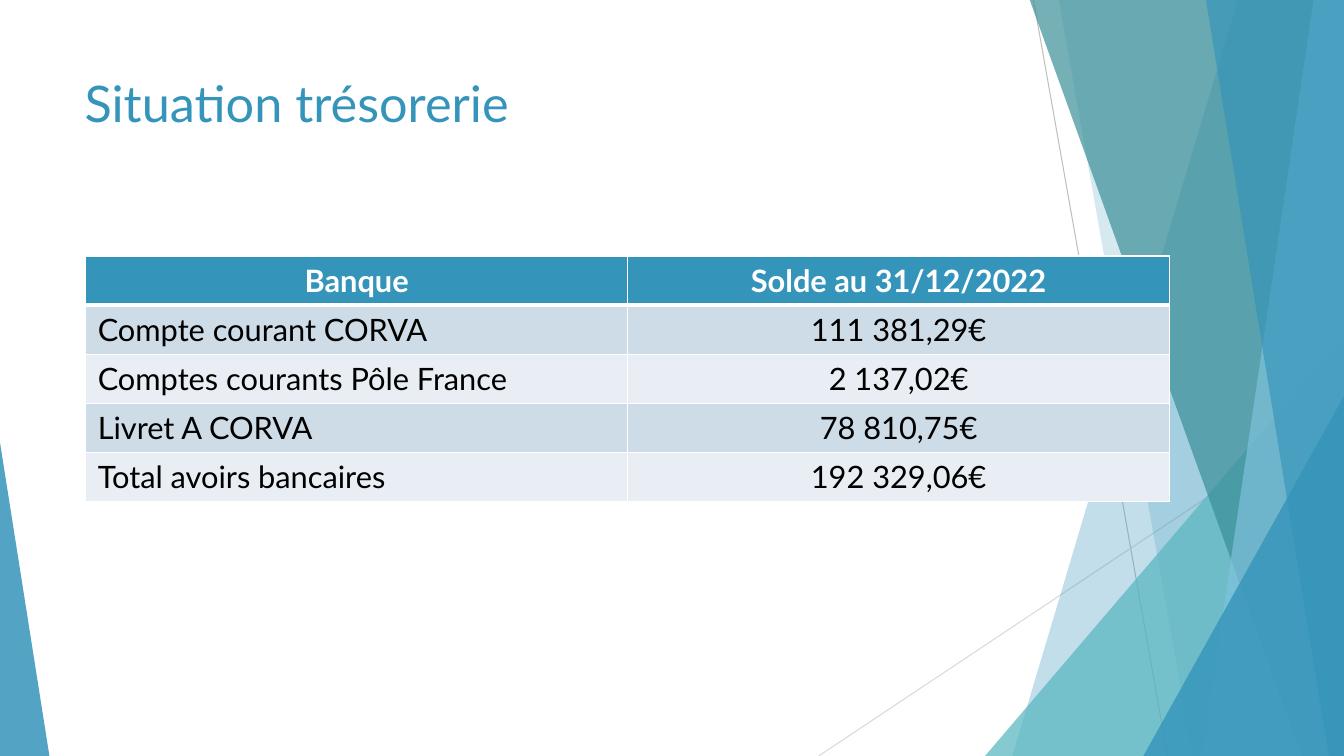
from dataclasses import dataclass

from lxml.etree import SubElement
from pptx import Presentation
from pptx.dml.color import RGBColor
from pptx.enum.shapes import MSO_CONNECTOR, MSO_SHAPE
from pptx.enum.text import MSO_ANCHOR, PP_ALIGN
from pptx.oxml.ns import qn
from pptx.util import Pt

PX = 9144  # EMU per px, 100 px to the inch
WIDE, HIGH = 1333, 750
FONT = "Lato"
COLORS = {
    "blue": "3494BA", "teal": "58B6C0", "deep": "3A8F98", "sky": "7FC1DB",
    "gray": "BFBFBF", "pale": "D9D9D9", "white": "FFFFFF", "black": "000000",
    "odd": "CEDCE7", "even": "E8EEF3",
}


@dataclass
class Ray:
    start: tuple[int, int]
    end: tuple[int, int]
    color: str


@dataclass
class Band:
    """A facet that runs to the right edge of the slide."""
    top: int
    foot: int
    color: str
    alpha: int


@dataclass
class Wedge:
    left: int
    top: int
    width: int
    tip: float
    color: str
    alpha: int


RAYS = [
    Ray((1025, 0), (1158, 750), "gray"),
    Ray((1333, 403), (812, 750), "pale"),
]
FACETS = [
    Band(1228, 1004, "blue", 30),
    Band(1050, 1183, "blue", 20),
    Wedge(977, 333, 356, 1, "teal", 72),
    Band(1021, 1291, "deep", 70),
    Band(1303, 1192, "sky", 70),
    Band(1196, 1318, "blue", 65),
    Wedge(1134, 393, 199, 1, "blue", 80),
    Wedge(0, 439, 49, 0, "blue", 85),
]
ROWS = [
    ("Banque", "Solde au 31/12/2022"),
    ("Compte courant CORVA", "111 381,29€"),
    ("Comptes courants Pôle France", "2 137,02€"),
    ("Livret A CORVA", "78 810,75€"),
    ("Total avoirs bancaires", "192 329,06€"),
]


def tint(name: str) -> RGBColor:
    return RGBColor.from_string(COLORS[name])


def style(run, size: int, color: str, bold: bool = False) -> None:
    run.font.name = FONT
    run.font.size = Pt(size)
    run.font.bold = bold
    run.font.color.rgb = tint(color)


def add_ray(slide, ray: Ray) -> None:
    ends = [n * PX for n in ray.start + ray.end]
    line = slide.shapes.add_connector(MSO_CONNECTOR.STRAIGHT, *ends)
    line.line.color.rgb = tint(ray.color)
    line.line.width = Pt(0.75)
    SubElement(line._element.spPr, qn("a:effectLst"))


def add_facet(slide, facet: Band | Wedge) -> None:
    if isinstance(facet, Band):
        pen = slide.shapes.build_freeform(facet.top, -1, scale=PX)
        pen.add_line_segments([(WIDE, -1), (WIDE, HIGH), (facet.foot, HIGH)])
        shape = pen.convert_to_shape()
    else:
        box = (facet.left, facet.top, facet.width, HIGH - facet.top)
        shape = slide.shapes.add_shape(
            MSO_SHAPE.ISOSCELES_TRIANGLE, *(n * PX for n in box))
        shape.adjustments[0] = facet.tip
    shape.shadow.inherit = False
    shape.line.fill.background()
    shape.fill.solid()
    shape.fill.fore_color.rgb = tint(facet.color)
    color = shape._element.spPr.find(qn("a:solidFill"))[0]
    SubElement(color, qn("a:alpha"), val=str(facet.alpha * 1000))


def add_title(slide, text: str) -> None:
    box = slide.shapes.add_textbox(74 * PX, 67 * PX, 940 * PX, 144 * PX)
    frame = box.text_frame
    frame.word_wrap = True
    frame.vertical_anchor = MSO_ANCHOR.TOP
    frame.text = text
    style(frame.paragraphs[0].runs[0], 36, "blue")


def add_edge(cell, side: str, width: int) -> None:
    edge = SubElement(cell._tc.get_or_add_tcPr(), qn(f"a:ln{side}"),
                      w=str(Pt(width)))
    fill = SubElement(edge, qn("a:solidFill"))
    SubElement(fill, qn("a:srgbClr"), val=COLORS["white"])


def fill_cell(cell, text: str, row: int, col: int) -> None:
    head = row == 0
    cell.margin_left = cell.margin_right = 12 * PX
    cell.margin_top = cell.margin_bottom = 6 * PX
    cell.text = text
    para = cell.text_frame.paragraphs[0]
    para.alignment = PP_ALIGN.CENTER if head or col else PP_ALIGN.LEFT
    style(para.runs[0], 22, "white" if head else "black", head)
    # Edges come before the fill; the rule below the header is thick
    for side in "LRTB":
        thick = (row, side) in [(0, "B"), (1, "T")]
        add_edge(cell, side, 3 if thick else 1)
    cell.fill.solid()
    cell.fill.fore_color.rgb = tint(
        "blue" if head else "odd" if row % 2 else "even")


def add_grid(slide) -> None:
    table = slide.shapes.add_table(len(ROWS), len(ROWS[0]), 85 * PX, 254 * PX,
                                   1075 * PX, 243 * PX).table
    for row, texts in enumerate(ROWS):
        for col, text in enumerate(texts):
            fill_cell(table.cell(row, col), text, row, col)


def main() -> None:
    deck = Presentation()
    deck.slide_width, deck.slide_height = WIDE * PX, HIGH * PX
    slide = deck.slides.add_slide(deck.slide_layouts[6])
    # Backdrop
    for ray in RAYS:
        add_ray(slide, ray)
    for facet in FACETS:
        add_facet(slide, facet)
    # Content
    add_title(slide, "Situation trésorerie")
    add_grid(slide)
    deck.save("out.pptx")


if __name__ == "__main__":
    main()
